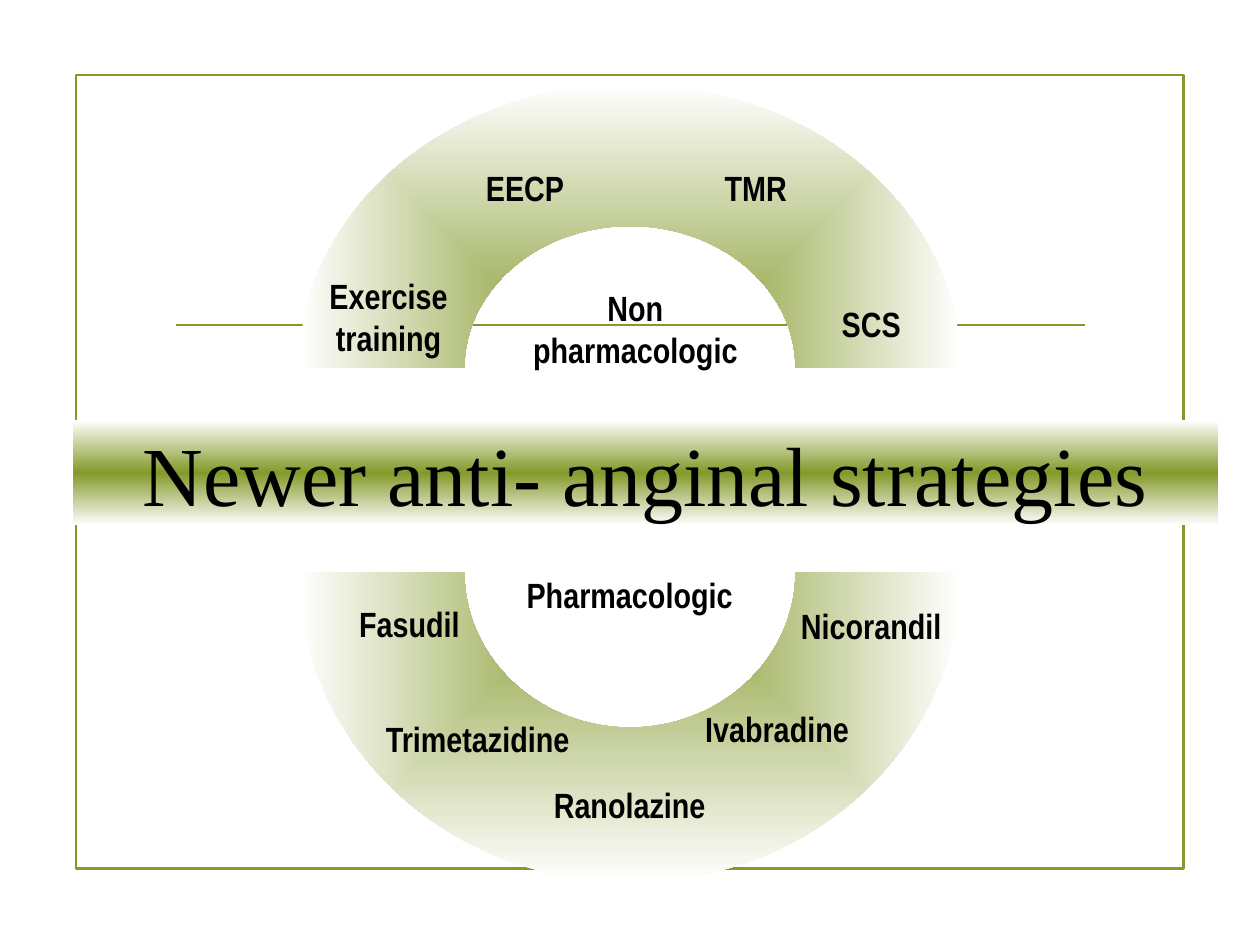
import pptx
import pptx.dml.color
import pptx.enum.shapes
import pptx.enum.text
import pptx.oxml
import pptx.oxml.ns
import pptx.util
from pptx.util import Cm

COLORS = {"olive": "83992A", "white": "FFFFFF", "text": "000000"}
BLACK = pptx.dml.color.RGBColor.from_string(COLORS["text"])
OLIVE = pptx.dml.color.RGBColor.from_string(COLORS["olive"])
NS = pptx.oxml.ns.nsdecls("a")


def set_gradient(sp, stops, direction):
    """Fill a shape with (percent, colour name) stops and a direction element."""
    gs = "".join(
        f'<a:gs pos="{pos * 1000}"><a:srgbClr val="{COLORS[name]}"/></a:gs>'
        for pos, name in stops
    )
    grad = pptx.oxml.parse_xml(
        f'<a:gradFill {NS} rotWithShape="1">'
        f"<a:gsLst>{gs}</a:gsLst>{direction}</a:gradFill>"
    )
    sp.fill.background()
    spPr = sp.element.spPr
    spPr.replace(spPr.find(pptx.oxml.ns.qn("a:noFill")), grad)


def add_label(s, text, left, top, width, height):
    tb = s.shapes.add_textbox(Cm(left), Cm(top), Cm(width), Cm(height))
    tf = tb.text_frame
    tf.word_wrap = True
    tf.text = text
    p = tf.paragraphs[0]
    p.alignment = pptx.enum.text.PP_ALIGN.CENTER
    f = p.runs[0].font
    f.name, f.size, f.bold = "Arial Narrow", pptx.util.Pt(20), True
    f.color.rgb = BLACK


prs = pptx.Presentation()
prs.slide_width, prs.slide_height = Cm(25.4), Cm(19.05)
s = prs.slides.add_slide(prs.slide_layouts[5])

# Frame and rule behind everything
frame = s.shapes.add_shape(
    pptx.enum.shapes.MSO_SHAPE.RECTANGLE, Cm(1.54), Cm(1.51), Cm(22.32), Cm(16)
)
frame.shadow.inherit = False
frame.fill.background()
rule = s.shapes.add_connector(
    pptx.enum.shapes.MSO_CONNECTOR.STRAIGHT, Cm(3.55), Cm(6.55), Cm(21.88), Cm(6.55)
)
rule.element.spPr.append(pptx.oxml.parse_xml(f"<a:effectLst {NS}/>"))
for sp in (frame, rule):
    sp.line.color.rgb = OLIVE
    sp.line.width = pptx.util.Pt(1.25)

# Title band, placed in front of the frame
title = s.shapes.title
s.shapes.element.append(title.element)
title.left, title.top, title.width, title.height = Cm(1.48), Cm(8.47), Cm(23.07), Cm(2.12)
set_gradient(
    title,
    [(0, "white"), (50, "olive"), (100, "white")],
    '<a:lin ang="5400000" scaled="0"/>',
)
tf = title.text_frame
tf.text = "Newer anti- anginal strategies"
tf.word_wrap = False
tf.auto_size = pptx.enum.text.MSO_AUTO_SIZE.NONE
tf.vertical_anchor = pptx.enum.text.MSO_ANCHOR.MIDDLE
p = tf.paragraphs[0]
p.alignment = pptx.enum.text.PP_ALIGN.CENTER
f = p.runs[0].font
f.name, f.size, f.color.rgb = "Times New Roman", pptx.util.Pt(48), BLACK

# Half rings: the inner ellipse is half the outer one; side -1 is up, 1 is down
left, w = Cm(6.03), Cm(13.34)
HALF_TURN = 180 * 60000
for top, h, side in [(Cm(5.29), Cm(12.5), 1), (Cm(1.7), Cm(11.43), -1)]:
    fb = s.shapes.build_freeform(left, top)
    fb.add_line_segments([(left + w, top), (left + w, top + h), (left, top + h)])
    ring = fb.convert_to_shape()
    outline = pptx.oxml.parse_xml(
        f'<a:path {NS} w="{w}" h="{h}">'
        f'<a:moveTo><a:pt x="{w // 4}" y="{h // 2}"/></a:moveTo>'
        f'<a:arcTo wR="{w // 4}" hR="{h // 4}" stAng="{HALF_TURN}" swAng="{-side * HALF_TURN}"/>'
        f'<a:lnTo><a:pt x="{w}" y="{h // 2}"/></a:lnTo>'
        f'<a:arcTo wR="{w // 2}" hR="{h // 2}" stAng="0" swAng="{side * HALF_TURN}"/>'
        "<a:close/></a:path>"
    )
    box = next(ring.element.iter(pptx.oxml.ns.qn("a:path")))
    box.getparent().replace(box, outline)
    ring.shadow.inherit = False
    ring.line.fill.background()
    set_gradient(
        ring,
        [(0, "olive"), (100, "white")],
        '<a:path path="rect"><a:fillToRect l="50000" t="50000" r="50000" b="50000"/></a:path>',
    )

for label in [
    ("Non pharmacologic", 9.95, 5.66, 5.72, 1.78),
    ("Pharmacologic", 9.2, 11.43, 6.99, 1.09),
    ("Trimetazidine", 7.19, 14.33, 4.88, 1.09),
    ("Fasudil", 6.35, 12.02, 3.81, 1.09),
    ("Nicorandil", 15.66, 12.06, 3.81, 1.09),
    ("Ivabradine", 13.76, 14.13, 3.81, 1.09),
    ("Ranolazine", 10.79, 15.67, 3.81, 1.09),
    ("Exercise training", 5.93, 5.41, 3.81, 1.78),
    ("EECP", 8.68, 3.23, 3.81, 1.02),
    ("SCS", 15.66, 5.97, 3.81, 1.02),
    ("TMR", 13.33, 3.23, 3.81, 1.02),
]:
    add_label(s, *label)

prs.save("out.pptx")
